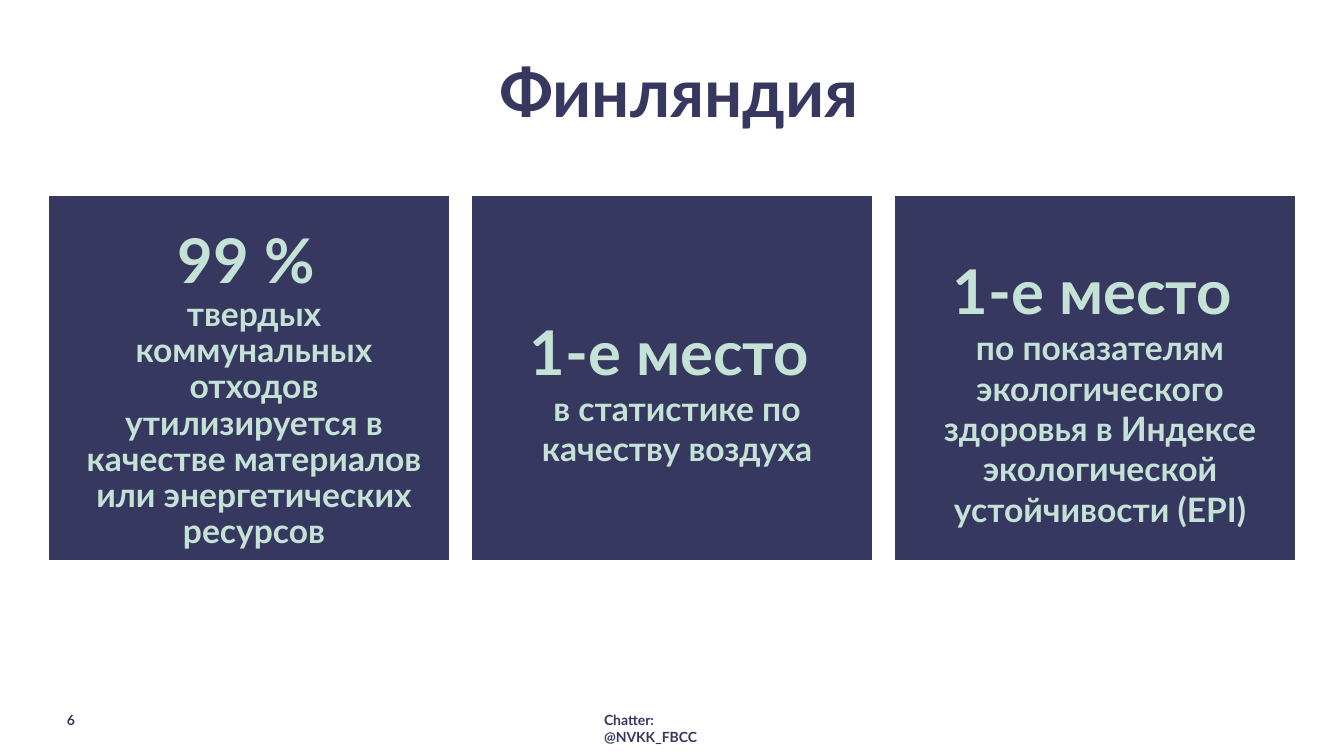
"""Builds the Finland facts slide."""
from dataclasses import dataclass

from pptx import Presentation
from pptx import util as u
from pptx.dml.color import RGBColor
from pptx.enum import text
from pptx.oxml import ns, xmlchemy

ALIGN = text.PP_ALIGN
ANCHOR = text.MSO_ANCHOR


@dataclass(frozen=True)
class Theme:
    """Colours, font and type sizes."""
    navy: RGBColor = RGBColor.from_string("363860")
    mint: RGBColor = RGBColor.from_string("C4E2D6")
    font: str = "Lato"
    title: int = 48
    figure: int = 44
    body: int = 24
    small: int = 10


THEME = Theme()
FACTS = [
    ("99 % ", "твердых коммунальных отходов утилизируется в качестве "
     "материалов или энергетических ресурсов", 0.9),
    ("1-е место ", "в статистике по качеству воздуха", 1.0),
    ("1-е место ", "по показателям экологического здоровья в Индексе "
     "экологической устойчивости (EPI)", 1.0),
]


def px(n):
    """Turn pixels into EMU."""
    return u.Emu(round(n * 914400 / 100.8))


def place(sp, left, top, width, height):
    """Move and size a shape, in pixels."""
    sp.left, sp.top, sp.width, sp.height = map(px, (left, top, width, height))


def set_frame(tf, margins, anchor):
    """Set the margins, anchor and wrapping of a text frame."""
    tf.word_wrap = True
    tf.auto_size = text.MSO_AUTO_SIZE.NONE
    tf.vertical_anchor = anchor
    tf.margin_left, tf.margin_top, tf.margin_right, tf.margin_bottom = map(px, margins)


def write(p, words, *, size, color=THEME.navy, align=ALIGN.LEFT, spacing=1.0, indent=0):
    """Write one bold, unbulleted paragraph."""
    pPr = p._p.get_or_add_pPr()
    pPr.set("marL", str(px(indent)))
    pPr.set("indent", "0")
    pPr.append(xmlchemy.OxmlElement("a:buNone"))
    p.alignment, p.line_spacing = align, spacing
    p.space_before = p.space_after = u.Pt(0)
    r = p.add_run()
    r.text = words
    r.font.name, r.font.size, r.font.bold = THEME.font, u.Pt(size), True
    r.font.color.rgb = color


def add_title(sp, words):
    """Fill the title placeholder."""
    place(sp, 56, 50, 1246, 82)
    set_frame(sp.text_frame, (0, 0, 0, 0), ANCHOR.MIDDLE)
    write(sp.text_frame.paragraphs[0], words, size=THEME.title, align=ALIGN.CENTER)


def add_fact(sp, left, figure, caption, spacing):
    """Fill a body placeholder as a fact panel."""
    place(sp, left, 196, 400, 364)
    sp.fill.solid()
    sp.fill.fore_color.rgb = THEME.navy
    tf = sp.text_frame
    set_frame(tf, (10, 31, 20, 5), ANCHOR.MIDDLE)
    style = dict(color=THEME.mint, align=ALIGN.CENTER, spacing=spacing, indent=20)
    write(tf.paragraphs[0], figure, size=THEME.figure, **style)
    write(tf.add_paragraph(), caption, size=THEME.body, **style)


def add_label(s, words, left, width, align):
    """Add a small label in the footer row."""
    sp = s.shapes.add_textbox(px(left), px(707), px(width), px(31))
    set_frame(sp.text_frame, (10, 5, 10, 5), ANCHOR.TOP)
    write(sp.text_frame.paragraphs[0], words, size=THEME.small, align=align)


def main():
    """Build and save the slide."""
    prs = Presentation()
    prs.slide_width, prs.slide_height = px(1344), px(756)
    s = prs.slides.add_slide(prs.slide_layouts.get_by_name("Comparison"))
    title, *bodies = s.placeholders
    add_title(title, "Финляндия")
    for i, (sp, fact) in enumerate(zip(bodies, FACTS)):
        add_fact(sp, 49 + i * 423, *fact)
    for sp in bodies[len(FACTS):]:
        sp.element.getparent().remove(sp.element)
    add_label(s, "Chatter: @NVKK_FBCC", 594, 156, ALIGN.LEFT)
    add_label(s, "6", 26, 59, ALIGN.RIGHT)
    prs.save("out.pptx")


if __name__ == "__main__":
    main()
